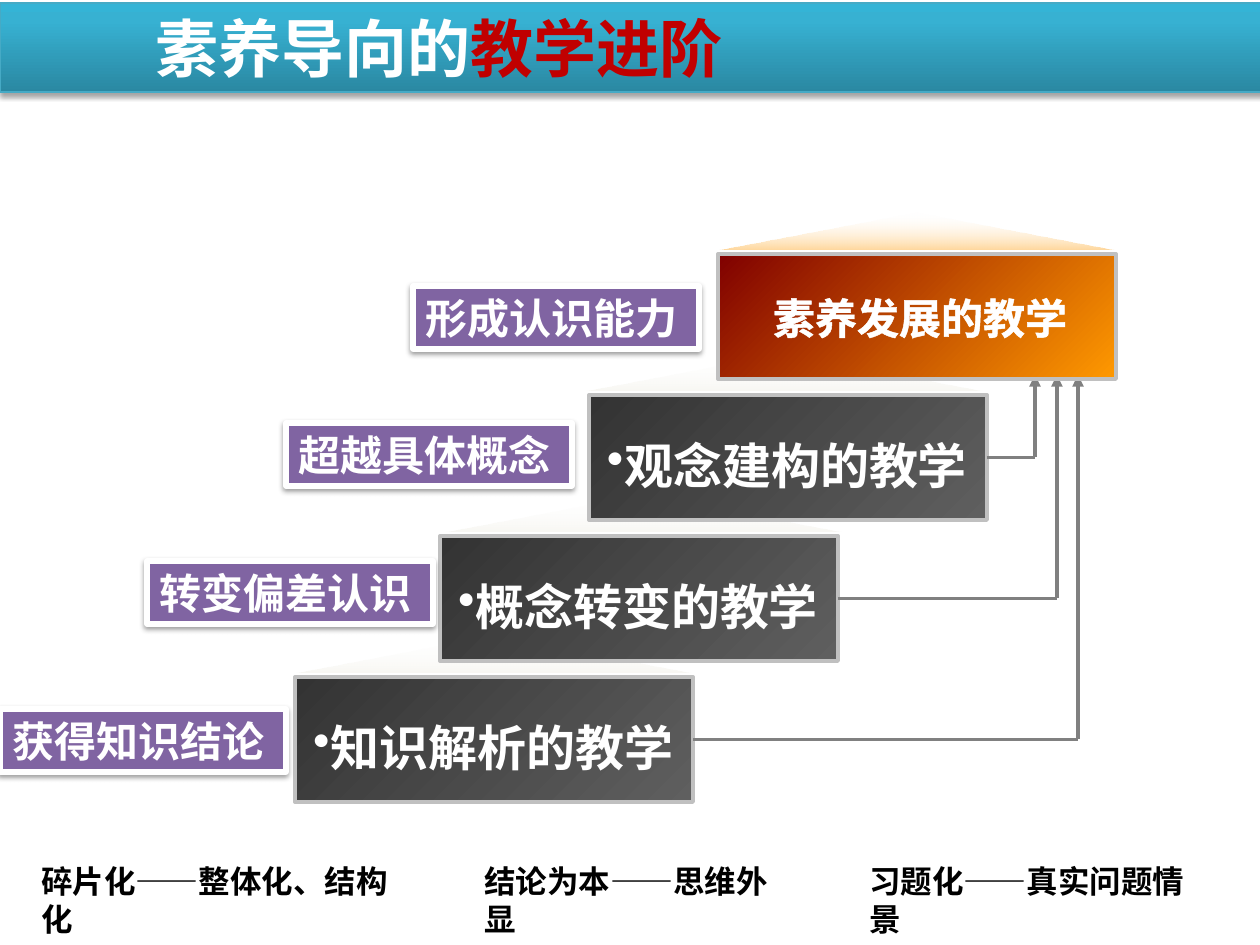
from dataclasses import dataclass
from typing import NamedTuple

from lxml.etree import SubElement
from pptx import Presentation
from pptx.dml.color import RGBColor
from pptx.enum.shapes import MSO_CONNECTOR, MSO_SHAPE
from pptx.enum.text import MSO_ANCHOR, MSO_AUTO_SIZE, PP_ALIGN
from pptx.oxml.ns import qn
from pptx.util import Emu, Pt

PX_PER_INCH = 126


class Area(NamedTuple):
    left: int
    top: int
    width: int
    height: int


class Stop(NamedTuple):
    position: int
    color: str
    opacity: int = 100


@dataclass(frozen=True)
class Theme:
    white: str = "FFFFFF"
    black: str = "000000"
    red: str = "C00000"
    purple: str = "8064A2"
    border: str = "C0C0C0"
    arrow: str = "808080"
    header_line: str = "46AAC5"
    header: tuple = (Stop(0, "2A88A2"), Stop(80, "37B1D2"), Stop(100, "34B4D6"))
    dark: tuple = (Stop(0, "333333"), Stop(100, "5F5F5F"))
    fire: tuple = (Stop(0, "800000"), Stop(100, "FF9900"))
    pale_glow: tuple = (Stop(0, "FFFFFF", 0), Stop(100, "EEECE1", 40))
    fire_glow: tuple = (Stop(0, "FFFFFF", 0), Stop(100, "FF9900", 40))
    cjk: str = "Noto Sans CJK SC"
    latin: str = "Arial"
    body: str = "Calibri"
    title_size: int = 36
    step_size: int = 28
    label_size: int = 24
    note_size: int = 18


@dataclass(frozen=True)
class Step:
    text: str
    left: int
    roof_left: int
    label: str
    label_left: int
    label_top: int
    label_font: str
    arrow_x: int


class Note(NamedTuple):
    text: str
    left: int
    width: int


THEME = Theme()
STEP_BOTTOM_TOP, STEP_RISE, STEP_WIDTH, STEP_HEIGHT = 677, 141, 398, 125
ROOF_RISE, ROOF_HEIGHT = 41, 37
ARROW_TIP = 375
STEPS = [
    Step("知识解析的教学", 295, 295, "获得知识结论", 0, 709, THEME.latin, 1078),
    Step("概念转变的教学", 440, 445, "转变偏差认识", 147, 561, THEME.cjk, 1057),
    Step("观念建构的教学", 589, 586, "超越具体概念", 286, 423, THEME.cjk, 1035),
    Step("素养发展的教学", 718, 718, "形成认识能力", 413, 286, THEME.cjk, 0),
]
NOTES = [
    Note("碎片化——整体化、结构化", 29, 400),
    Note("结论为本——思维外显", 472, 338),
    Note("习题化——真实问题情景", 857, 369),
]


def px(length: int) -> Emu:
    return Emu(round(length * 914400 / PX_PER_INCH))


def place(shape, area: Area) -> None:
    shape.left, shape.top, shape.width, shape.height = map(px, area)


def set_line(shape, color: str, points: float) -> None:
    shape.line.color.rgb = RGBColor.from_string(color)
    shape.line.width = Pt(points)


def set_gradient(shape, stops: tuple, angle: int) -> None:
    shape.fill.gradient()
    gradient = shape.element.spPr.find(qn("a:gradFill"))
    for child in list(gradient):
        gradient.remove(child)
    stop_list = SubElement(gradient, qn("a:gsLst"))
    for stop in stops:
        mark = SubElement(stop_list, qn("a:gs"), pos=str(stop.position * 1000))
        color = SubElement(mark, qn("a:srgbClr"), val=stop.color)
        if stop.opacity < 100:
            SubElement(color, qn("a:alpha"), val=str(stop.opacity * 1000))
    SubElement(gradient, qn("a:lin"), ang=str(angle * 60000), scaled="0")


def set_shadow(shape, opacity: int, distance: float) -> None:
    shape.shadow.inherit = False
    effects = shape.element.spPr.find(qn("a:effectLst"))
    shadow = SubElement(effects, qn("a:outerShdw"), blurRad=str(Pt(3.1)),
                        dist=str(Pt(distance)), dir="5400000", rotWithShape="0")
    color = SubElement(shadow, qn("a:srgbClr"), val=THEME.black)
    SubElement(color, qn("a:alpha"), val=str(opacity * 1000))


def add_span(para, text: str, size: int, color: str, font: str):
    span = para.add_run()
    span.text = text
    span.font.size = Pt(size)
    span.font.bold = True
    span.font.name = font
    span.font.color.rgb = RGBColor.from_string(color)
    if font == THEME.cjk:
        SubElement(span.font._element, qn("a:ea"), typeface=font)
    return span


def add_shape(page, kind: MSO_SHAPE, area: Area):
    shape = page.shapes.add_shape(kind, *map(px, area))
    shape.shadow.inherit = False
    return shape


def add_text(page, area: Area, text: str, size: int, color: str, font: str):
    box = page.shapes.add_textbox(*map(px, area))
    box.text_frame.word_wrap = True
    para = box.text_frame.paragraphs[0]
    return para, add_span(para, text, size, color, font)


def add_bullet(para, color: str) -> None:
    properties = para._p.get_or_add_pPr()
    properties.set("marL", "0")
    properties.set("indent", "0")
    bullet_color = SubElement(properties, qn("a:buClr"))
    SubElement(bullet_color, qn("a:srgbClr"), val=color)
    SubElement(properties, qn("a:buChar"), char="•")


def add_title(page) -> None:
    title = page.shapes.title
    place(title, Area(0, 3, 1289, 89))
    set_gradient(title, THEME.header, 270)
    set_line(title, THEME.header_line, 0.75)
    set_shadow(title, 35, 1.8)
    frame = title.text_frame
    frame.auto_size = MSO_AUTO_SIZE.NONE
    frame.vertical_anchor = MSO_ANCHOR.MIDDLE
    frame.margin_left = px(155)
    para = frame.paragraphs[0]
    para.alignment = PP_ALIGN.LEFT
    add_span(para, "素养导向的", THEME.title_size, THEME.white, THEME.cjk)
    add_span(para, "教学进阶", THEME.title_size, THEME.red, THEME.cjk)


def add_roof(page, step: Step, top: int, stops: tuple) -> None:
    area = Area(step.roof_left, top - ROOF_RISE, STEP_WIDTH, ROOF_HEIGHT)
    roof = add_shape(page, MSO_SHAPE.ISOSCELES_TRIANGLE, area)
    set_gradient(roof, stops, 90)
    roof.line.fill.background()


def add_box(page, step: Step, top: int, stops: tuple):
    box = add_shape(page, MSO_SHAPE.RECTANGLE, Area(step.left, top, STEP_WIDTH, STEP_HEIGHT))
    set_gradient(box, stops, 45)
    set_line(box, THEME.border, 2.25)
    return box


def add_step_text(page, step: Step, top: int) -> None:
    para, _ = add_text(page, Area(step.left, top + 34, 396, 72), step.text,
                       THEME.step_size, THEME.white, THEME.cjk)
    para.alignment = PP_ALIGN.CENTER
    add_bullet(para, THEME.white)


def add_goal_text(page, step: Step, top: int) -> None:
    para, span = add_text(page, Area(step.left + 30, top + 32, 344, 69), step.text,
                          THEME.label_size, THEME.white, THEME.cjk)
    para.alignment = PP_ALIGN.CENTER
    outline = span.font._element.makeelement(qn("a:ln"), {"w": str(Pt(0.75))})
    fill = SubElement(outline, qn("a:solidFill"))
    SubElement(fill, qn("a:srgbClr"), val=THEME.white)
    span.font._element.insert(0, outline)


def add_label(page, step: Step) -> None:
    label = add_shape(page, MSO_SHAPE.RECTANGLE, Area(step.label_left, step.label_top, 286, 63))
    label.fill.solid()
    label.fill.fore_color.rgb = RGBColor.from_string(THEME.purple)
    set_line(label, THEME.white, 3)
    set_shadow(label, 38, 1.6)
    label.text_frame.word_wrap = True
    label.text_frame.vertical_anchor = MSO_ANCHOR.MIDDLE
    para = label.text_frame.paragraphs[0]
    para.alignment = PP_ALIGN.LEFT
    add_span(para, step.label, THEME.label_size, THEME.white, step.label_font)


def add_line(page, start: tuple, end: tuple):
    line = page.shapes.add_connector(MSO_CONNECTOR.STRAIGHT, *map(px, start + end))
    set_line(line, THEME.arrow, 2.25)
    SubElement(line.element.spPr, qn("a:effectLst"))
    return line


def add_arrow(page, step: Step, top: int, box) -> None:
    middle = top + STEP_HEIGHT // 2
    branch = add_line(page, (step.left + STEP_WIDTH, middle), (step.arrow_x, middle))
    branch.begin_connect(box, 3)
    branch.end_y = branch.begin_y
    riser = add_line(page, (step.arrow_x, middle), (step.arrow_x, ARROW_TIP))
    SubElement(riser.line._get_or_add_ln(), qn("a:tailEnd"), type="triangle")


def main() -> None:
    deck = Presentation()
    deck.slide_width, deck.slide_height = px(1260), px(945)
    page = deck.slides.add_slide(deck.slide_layouts[5])
    add_title(page)
    for level, step in enumerate(STEPS):
        top = STEP_BOTTOM_TOP - level * STEP_RISE
        is_goal = step is STEPS[-1]
        add_roof(page, step, top, THEME.fire_glow if is_goal else THEME.pale_glow)
        box = add_box(page, step, top, THEME.fire if is_goal else THEME.dark)
        if is_goal:
            add_goal_text(page, step, top)
        else:
            add_step_text(page, step, top)
            add_arrow(page, step, top, box)
        add_label(page, step)
    for note in NOTES:
        add_text(page, Area(note.left, 856, note.width, 89), note.text,
                 THEME.note_size, THEME.black, THEME.body)
    deck.save("out.pptx")


if __name__ == "__main__":
    main()
